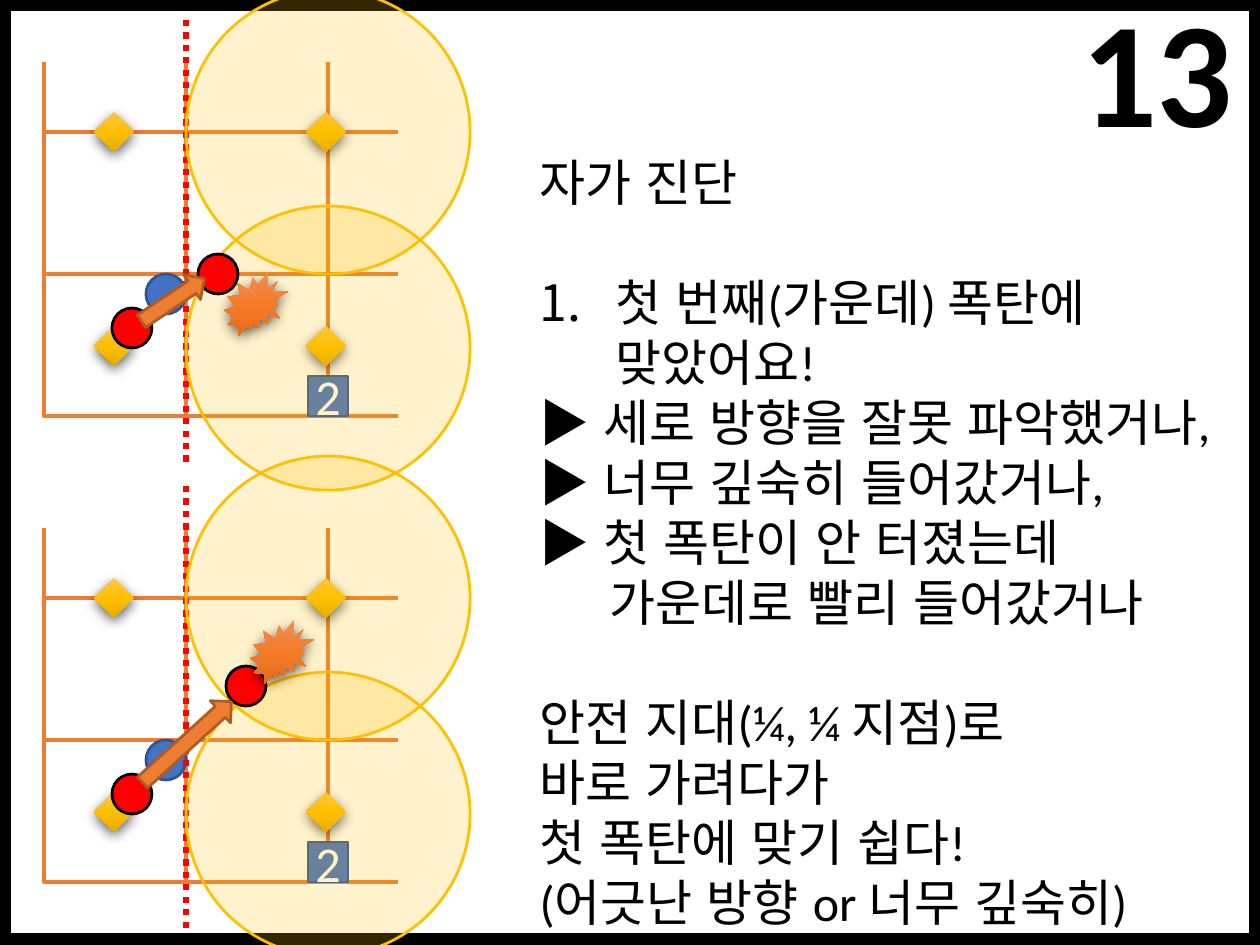
import pptx
import pptx.dml.color
import pptx.enum.dml
import pptx.enum.lang
import pptx.enum.shapes
import pptx.enum.text
import pptx.oxml
import pptx.oxml.ns
import pptx.util

RGB = pptx.dml.color.RGBColor
Inches = pptx.util.Inches
Pt = pptx.util.Pt
Kind = pptx.enum.shapes.MSO_SHAPE
Align = pptx.enum.text.PP_ALIGN
NS = pptx.oxml.ns.nsdecls("a")

BLACK = RGB(0x00, 0x00, 0x00)
WHITE = RGB(0xFF, 0xFF, 0xFF)
RED = RGB(0xFF, 0x00, 0x00)
BLUE = RGB(0x44, 0x72, 0xC4)
NAVY = RGB(0x32, 0x54, 0x91)
ORANGE = RGB(0xED, 0x7D, 0x31)
BROWN = RGB(0xAF, 0x5C, 0x24)
GOLD = RGB(0xFF, 0xC0, 0x00)
GOLDS = (RGB(0xFF, 0xC6, 0x4B), GOLD, RGB(0xE3, 0xAB, 0x00))
FLAMES = (RGB(0xF1, 0x8C, 0x57), RGB(0xF6, 0x7B, 0x28), RGB(0xE5, 0x6C, 0x19))

LEFT, CELL, STUB, DOT, ZONE = 0.22, 0.71, 0.35, 0.2, 1.42


def xml(text):
    return pptx.oxml.parse_xml(text)


class Board:
    font = "Calibri"
    size = 18

    def __init__(self, slide):
        self.slide = slide
        self.shapes = slide.shapes

    def shape(self, kind, x, y, w, h, fill=None, line=None, width=1, turn=0):
        s = self.shapes.add_shape(kind, Inches(x), Inches(y), Inches(w), Inches(h))
        s.shadow.inherit = False
        s.rotation = turn
        if fill is None:
            s.fill.background()
        else:
            s.fill.solid()
            s.fill.fore_color.rgb = fill
        if line is None:
            s.line.fill.background()
        else:
            s.line.color.rgb = line
            s.line.width = Pt(width)
        return s

    def glow(self, kind, x, y, size, tones):
        """Shape with a vertical gradient and a soft shadow."""
        s = self.shape(kind, x, y, size, size, tones[1])
        stops = "".join(f'<a:gs pos="{i * 50000}"><a:srgbClr val="{tone}"/></a:gs>'
                        for i, tone in enumerate(tones))
        props = s._element.spPr
        props.replace(props.find(pptx.oxml.ns.qn("a:solidFill")), xml(
            f'<a:gradFill {NS} rotWithShape="1"><a:gsLst>{stops}</a:gsLst>'
            '<a:lin ang="5400000" scaled="0"/></a:gradFill>'))
        props.find(pptx.oxml.ns.qn("a:effectLst")).append(xml(
            f'<a:outerShdw {NS} blurRad="57150" dist="19050" dir="5400000" algn="ctr" '
            'rotWithShape="0"><a:srgbClr val="000000"><a:alpha val="63000"/>'
            '</a:srgbClr></a:outerShdw>'))

    def dot(self, x, y, fill=RED, line=BLACK):
        self.shape(Kind.OVAL, x, y, DOT, DOT, fill, line)

    def zone(self, x, y):
        s = self.shape(Kind.OVAL, x, y, ZONE, ZONE, GOLD, GOLD)
        tone = s._element.spPr.find(pptx.oxml.ns.qn("a:solidFill"))[0]
        tone.append(xml(f'<a:alpha {NS} val="20000"/>'))

    def line(self, x1, y1, x2, y2, color=ORANGE, width=1.5, dash=None):
        c = self.shapes.add_connector(pptx.enum.shapes.MSO_CONNECTOR.STRAIGHT,
                                      Inches(x1), Inches(y1), Inches(x2), Inches(y2))
        c.line.color.rgb = color
        c.line.width = Pt(width)
        if dash:
            c.line.dash_style = dash
        c._element.spPr.append(xml(f"<a:effectLst {NS}/>"))

    def run(self, para, text, size=None, color=BLACK, bold=False):
        r = para.add_run()
        r.text = text
        r.font.name = self.font
        r.font.size = Pt(size or self.size)
        r.font.color.rgb = color
        r.font.bold = bold
        r.font.language_id = pptx.enum.lang.MSO_LANGUAGE_ID.KOREAN
        return r

    def label(self, x, y, text):
        s = self.shape(Kind.RECTANGLE, x, y, DOT, DOT, BLUE, NAVY)
        tf = s.text_frame
        tf.margin_left = tf.margin_right = tf.margin_top = tf.margin_bottom = 0
        tf.vertical_anchor = pptx.enum.text.MSO_ANCHOR.MIDDLE
        tf.paragraphs[0].alignment = Align.CENTER
        self.run(tf.paragraphs[0], text, color=WHITE)

    def box(self, x, y, w, h, wrap=True):
        s = self.shapes.add_textbox(Inches(x), Inches(y), Inches(w), Inches(h))
        s.text_frame.word_wrap = wrap
        return s.text_frame

    def title(self, text):
        para = self.box(5.3, -0.16, 0.97, 1.01, wrap=False).paragraphs[0]
        para.alignment = Align.CENTER
        r = self.run(para, text, 54, bold=True)
        r.font._element.insert(0, xml(
            f'<a:ln {NS} w="9525"><a:solidFill><a:srgbClr val="FFFFFF"/>'
            '</a:solidFill></a:ln>'))

    def notes(self, rows):
        """Rows of (lines, gap above, left indent, numbered)."""
        tf = self.box(2.6, 0.71, 3.9, 4.04)
        for i, (lines, gap, left, number) in enumerate(rows):
            para = tf.add_paragraph() if i else tf.paragraphs[0]
            para.space_before = Pt(gap)
            props = para._p.get_or_add_pPr()
            props.set("marL", str(Inches(left)))
            if number:
                props.set("indent", str(-Inches(left)))
                props.append(xml(f'<a:buAutoNum {NS} type="arabicPeriod"/>'))
            for j, text in enumerate(lines):
                if j:
                    para.add_line_break()
                self.run(para, text)

    def grid(self, top):
        self.shapes = self.slide.shapes.add_group_shape().shapes
        xs = [LEFT + i * CELL for i in range(3)]
        ys = [top + i * CELL for i in range(3)]
        for y in ys[:2]:
            for x in xs[:2]:
                self.shape(Kind.RECTANGLE, x, y, CELL, CELL, line=ORANGE, width=1.5)
        for x in xs:
            self.line(x, top, x, top - STUB)
        for y in ys:
            self.line(xs[2], y, xs[2] + STUB, y)
        self.dot(0.73, ys[1], BLUE, NAVY)
        for y in (top - 0.1, top + 0.97):
            for x in (0.47, 1.53):
                self.glow(Kind.DIAMOND, x, y, DOT, GOLDS)
        self.shapes = self.slide.shapes

    def panel(self, top, goal, arrow, blast):
        """Grid with its bomb zones and one move; places are relative to top."""
        self.grid(top)
        self.dot(0.56, top + 0.88)
        self.line(LEFT + CELL, top - 0.56, LEFT + CELL, top + 1.65, RED, 2.25,
                  pptx.enum.dml.MSO_LINE.ROUND_DOT)
        self.label(1.54, top + 1.22, "2")
        for y in (-CELL, 0.37):
            self.zone(LEFT + CELL, top + y)
        self.dot(goal[0], top + goal[1])
        x, y, long, turn = arrow
        self.shape(Kind.UP_ARROW, x, top + y, 0.15, long, ORANGE, BROWN, turn=turn)
        self.glow(Kind.EXPLOSION2, blast[0], top + blast[1], 0.32, FLAMES)


def main():
    deck = pptx.Presentation()
    # A 4:3 card of 16 by 12 centimetres
    deck.slide_width, deck.slide_height = Inches(16 / 2.54), Inches(12 / 2.54)
    board = Board(deck.slides.add_slide(deck.slide_layouts[6]))

    # Frame
    for x, y, w, h in ((0, 0, 6.3, 0.05), (0, 0.05, 0.05, 4.67),
                       (0, 4.67, 6.3, 0.05), (6.25, 0.02, 0.05, 4.67)):
        board.shape(Kind.RECTANGLE, x, y, w, h, BLACK, BLACK)

    # Page number and advice
    board.title("13")
    board.notes([
        (["자가 진단"], 0, 0, False),
        (["첫 번째(가운데) 폭탄에", "맞았어요!"], 21.5, 0.38, True),
        (["▶ 세로 방향을 잘못 파악했거나,"], 0, 0, False),
        (["▶ 너무 깊숙히 들어갔거나,"], 0, 0, False),
        (["▶ 첫 폭탄이 안 터졌는데"], 0, 0, False),
        (["가운데로 빨리 들어갔거나"], 0, 0.35, False),
        (["안전 지대(¼, ¼ 지점)로"], 21.5, 0, False),
        (["바로 가려다가"], 0, 0, False),
        (["첫 폭탄에 맞기 쉽다!"], 0, 0, False),
        (["(어긋난 방향 or 너무 깊숙히)"], 0, 0, False),
    ])

    # Two ways to get hit
    board.panel(0.66, (0.99, 0.61), (0.79, 0.65, 0.38, 56), (1.12, 0.7))
    board.panel(2.99, (1.13, 0.34), (0.86, 0.42, 0.6, 47.7), (1.25, 0.11))

    deck.save("out.pptx")


if __name__ == "__main__":
    main()
